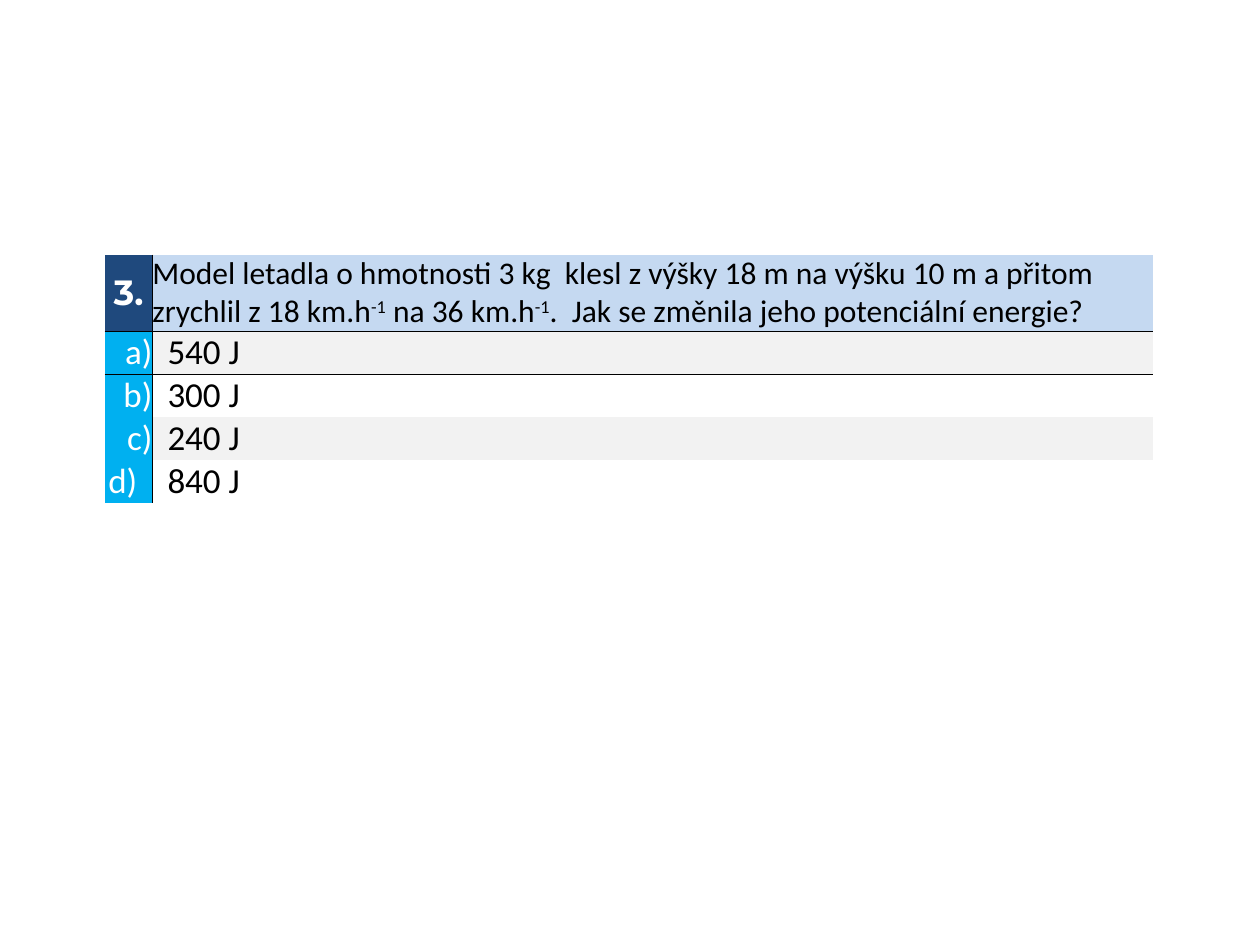
from lxml.etree import SubElement
from pptx import Presentation
from pptx.dml.color import RGBColor
from pptx.enum.text import MSO_ANCHOR, PP_ALIGN
from pptx.oxml.ns import qn
from pptx.util import Inches, Pt

NAVY = RGBColor(0x1F, 0x49, 0x7D)
PALE_BLUE = RGBColor(0xC5, 0xD9, 0xF1)
CYAN = RGBColor(0x00, 0xB0, 0xF0)
GRAY = RGBColor(0xF2, 0xF2, 0xF2)
BLACK = RGBColor(0, 0, 0)
WHITE = RGBColor(0xFF, 0xFF, 0xFF)
NO_STYLE_NO_GRID = "{2D5ABB26-0587-4C30-8999-92F81FD0307C}"

NUMBER_WIDTH = Inches(0.38)
QUESTION_HEIGHT = Inches(0.61)
INDENT = Inches(0.12)

# Text pieces alternate between normal and superscript.
QUESTION = [
    "Model letadla o hmotnosti 3 kg  klesl z výšky 18 m na výšku 10 m "
    "a přitom zrychlil z 18 km.h",
    "-1", " na 36 km.h", "-1",
    ".  Jak se změnila jeho potenciální energie?",
]
ANSWERS = [("a)", "540 J"), ("b)", "300 J"), ("c)", "240 J"), ("d)", "840 J")]


def add_borders(cell, sides):
    """Draw thin lines on the given sides, named in the order L, R, T, B."""
    tcPr = cell._tc.get_or_add_tcPr()
    for side in sides:
        ln = SubElement(tcPr, qn(f"a:ln{side}"), w=str(Pt(0.5)))
        fill = SubElement(ln, qn("a:solidFill"))
        SubElement(fill, qn("a:srgbClr"), val=str(BLACK))


def fill_cell(cell, pieces, color, fill=None, sides="", size=20,
              font="Calibri", bold=False, align=PP_ALIGN.LEFT,
              anchor=MSO_ANCHOR.MIDDLE, left=0, right=0):
    add_borders(cell, sides)
    if fill is None:
        cell.fill.background()
    else:
        cell.fill.solid()
        cell.fill.fore_color.rgb = fill
    cell.margin_left, cell.margin_right = left, right
    cell.margin_top = cell.margin_bottom = 0
    cell.vertical_anchor = anchor
    p = cell.text_frame.paragraphs[0]
    p.alignment = align
    for i, piece in enumerate(pieces):
        r = p.add_run()
        r.text = piece
        f = r.font
        f.size, f.name, f.bold = Pt(size), font, bold
        f.color.rgb = color
        if i % 2:
            f._element.set("baseline", "30000")


def add_question(s, number, question, answers, left, top, width, height):
    frame = s.shapes.add_table(len(answers) + 1, 2, left, top, width, height)
    table = frame.table
    table.first_row = table.horz_banding = False
    table._tbl.tblPr.find(qn("a:tableStyleId")).text = NO_STYLE_NO_GRID
    table.columns[0].width = NUMBER_WIDTH
    table.columns[1].width = width - NUMBER_WIDTH
    table.rows[0].height = QUESTION_HEIGHT
    answer_height = (height - QUESTION_HEIGHT) // len(answers)

    fill_cell(table.cell(0, 0), [number], WHITE, NAVY, "RB",
              font="Montserrat", bold=True, align=PP_ALIGN.CENTER)
    fill_cell(table.cell(0, 1), question, BLACK, PALE_BLUE, "LB", size=18,
              anchor=MSO_ANCHOR.TOP)
    for i, (letter, answer) in enumerate(answers, 1):
        table.rows[i].height = answer_height
        top_side = "T" if i == 1 else ""
        fill_cell(table.cell(i, 0), [letter], WHITE, CYAN, "R" + top_side,
                  align=PP_ALIGN.RIGHT,
                  right=INDENT if i == len(answers) else 0)
        fill_cell(table.cell(i, 1), [answer], BLACK, GRAY if i % 2 else None,
                  "L" + top_side, anchor=MSO_ANCHOR.BOTTOM, left=INDENT)


def main():
    prs = Presentation()
    prs.slide_width, prs.slide_height = Inches(10), Inches(7.5)
    s = prs.slides.add_slide(prs.slide_layouts[6])
    add_question(s, "3.", QUESTION, ANSWERS,
                 Inches(0.83), Inches(2.02), Inches(8.32), Inches(1.97))
    prs.save("out.pptx")


if __name__ == "__main__":
    main()
